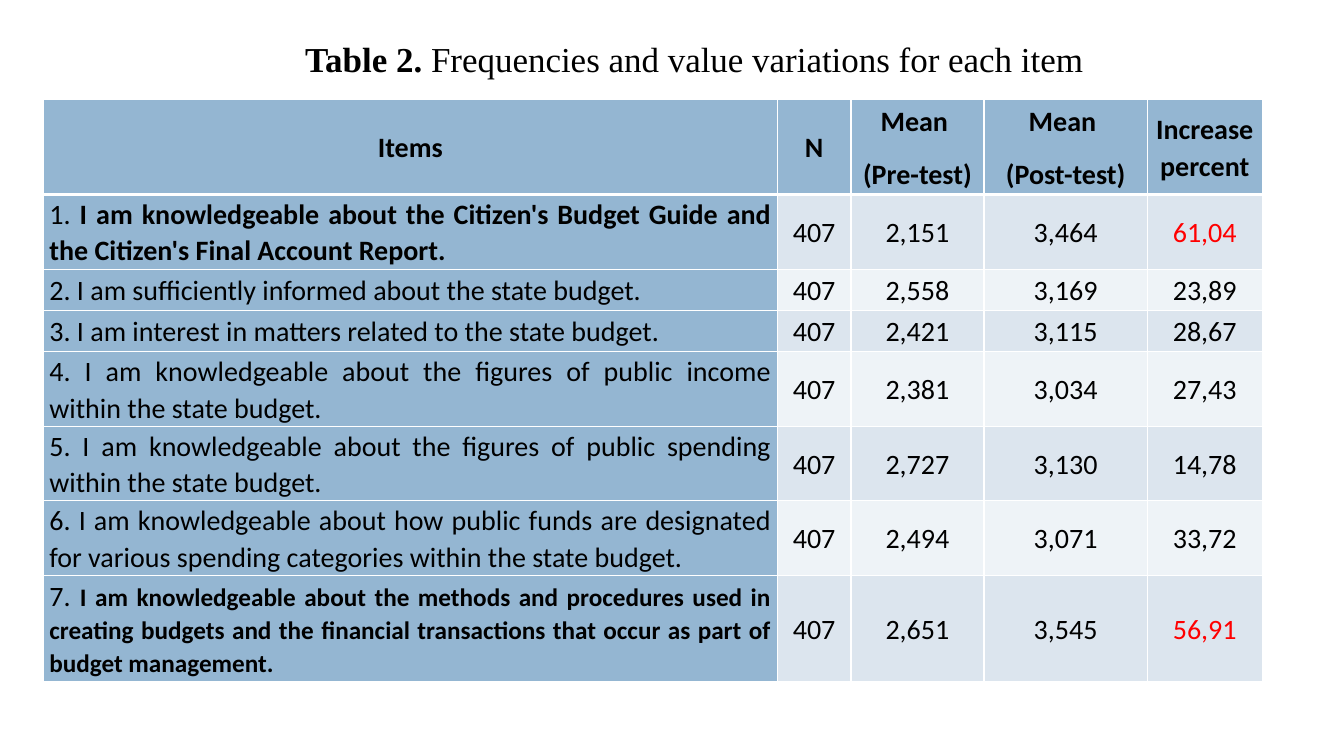
from lxml import etree
from pptx import Presentation
from pptx import util as u
from pptx.dml.color import RGBColor
from pptx.enum import text
from pptx.oxml import ns

COLORS = {
    "black": "000000",
    "red": "FF0000",
    "white": "FFFFFF",
    "blue": "94B6D2",
    "odd": "DCE5EE",
    "even": "EEF3F7",
}
COLUMN_WIDTHS = [7.28, 0.73, 1.32, 1.62, 1.14]
ROW_HEIGHTS = [0.94, 0.74, 0.41, 0.41, 0.74, 0.74, 0.74, 1.05]
HEADERS = [["Items"], ["N"], ["Mean ", "(Pre-test)"], ["Mean ", "(Post-test)"], ["Increase percent"]]
ITEMS = [
    ("I am knowledgeable about the Citizen's Budget Guide and the Citizen's Final Account Report.",
     "407", "2,151", "3,464", "61,04"),
    ("I am sufficiently informed about the state budget.", "407", "2,558", "3,169", "23,89"),
    ("I am interest in matters related to the state budget.", "407", "2,421", "3,115", "28,67"),
    ("I am knowledgeable about the figures of public income within the state budget.",
     "407", "2,381", "3,034", "27,43"),
    ("I am knowledgeable about the figures of public spending within the state budget.",
     "407", "2,727", "3,130", "14,78"),
    ("I am knowledgeable about how public funds are designated for various spending categories "
     "within the state budget.", "407", "2,494", "3,071", "33,72"),
    ("I am knowledgeable about the methods and procedures used in creating budgets and the "
     "financial transactions that occur as part of budget management.",
     "407", "2,651", "3,545", "56,91"),
]
HIGHLIGHT_SIZES = {1: 20, 7: 18}


def add_run(paragraph, words, size=20, bold=False, color="black", font="Calibri"):
    run = paragraph.add_run()
    run.text = words
    run.font.name = font
    run.font.size = u.Pt(size)
    run.font.bold = bold
    run.font.color.rgb = RGBColor.from_string(COLORS[color])


def set_borders(cell, bottom_width):
    properties = cell._tc.get_or_add_tcPr()
    widths = {"lnL": 1, "lnR": 1, "lnT": 1, "lnB": bottom_width}
    for position, (side, width) in enumerate(widths.items()):
        line = etree.Element(ns.qn(f"a:{side}"), w=str(u.Pt(width)))
        fill = etree.SubElement(line, ns.qn("a:solidFill"))
        etree.SubElement(fill, ns.qn("a:srgbClr"), val=COLORS["white"])
        properties.insert(position, line)


def format_cell(cell, fill, bottom_width=1):
    cell.fill.solid()
    cell.fill.fore_color.rgb = RGBColor.from_string(COLORS[fill])
    cell.vertical_anchor = text.MSO_ANCHOR.MIDDLE
    cell.margin_left = cell.margin_right = u.Inches(0.06)
    cell.margin_top = cell.margin_bottom = 0
    set_borders(cell, bottom_width)


def format_paragraph(paragraph, alignment=text.PP_ALIGN.CENTER):
    paragraph.alignment = alignment
    paragraph.line_spacing = 1.07
    paragraph.space_before = paragraph.space_after = u.Pt(6)
    return paragraph


def fill_header(cell, lines):
    format_cell(cell, "blue", bottom_width=3)
    frame = cell.text_frame
    for index, words in enumerate(lines):
        paragraph = frame.add_paragraph() if index else frame.paragraphs[0]
        add_run(format_paragraph(paragraph), words, bold=True)


def fill_item(cell, number, statement):
    format_cell(cell, "blue")
    paragraph = format_paragraph(cell.text_frame.paragraphs[0], text.PP_ALIGN.JUSTIFY)
    if number in HIGHLIGHT_SIZES:
        add_run(paragraph, f"{number}. ")
        add_run(paragraph, statement, size=HIGHLIGHT_SIZES[number], bold=True)
    else:
        add_run(paragraph, f"{number}. {statement}")


def fill_value(cell, value, band, color):
    format_cell(cell, band)
    add_run(format_paragraph(cell.text_frame.paragraphs[0]), value, color=color)


def add_caption(slide):
    caption = slide.shapes.title
    caption.left, caption.top = u.Inches(1.5), u.Inches(0.32)
    caption.width, caption.height = u.Inches(10.77), u.Inches(0.52)
    frame = caption.text_frame
    frame.word_wrap = True
    frame.auto_size = text.MSO_AUTO_SIZE.NONE
    frame.vertical_anchor = text.MSO_ANCHOR.MIDDLE
    paragraph = frame.paragraphs[0]
    paragraph.alignment = text.PP_ALIGN.CENTER
    add_run(paragraph, "Table 2. ", 25, True, font="Times New Roman")
    add_run(paragraph, "Frequencies and value variations for each item", 25, font="Times New Roman")


def add_frequencies(slide):
    frequencies = slide.shapes.add_table(
        len(ROW_HEIGHTS), len(COLUMN_WIDTHS), u.Inches(0.43), u.Inches(0.99),
        u.Inches(sum(COLUMN_WIDTHS)), u.Inches(sum(ROW_HEIGHTS))).table
    for column, width in zip(frequencies.columns, COLUMN_WIDTHS):
        column.width = u.Inches(width)
    for row, height in zip(frequencies.rows, ROW_HEIGHTS):
        row.height = u.Inches(height)
    for column, lines in enumerate(HEADERS):
        fill_header(frequencies.cell(0, column), lines)
    for number, (statement, *values) in enumerate(ITEMS, start=1):
        fill_item(frequencies.cell(number, 0), number, statement)
        band = "odd" if number % 2 else "even"
        for column, value in enumerate(values, start=1):
            highlighted = number in HIGHLIGHT_SIZES and column == len(values)
            fill_value(frequencies.cell(number, column), value, band,
                       "red" if highlighted else "black")


def main():
    deck = Presentation()
    deck.slide_width, deck.slide_height = u.Inches(13.33), u.Inches(7.5)
    slide = deck.slides.add_slide(deck.slide_layouts[5])
    add_caption(slide)
    add_frequencies(slide)
    deck.save("out.pptx")


if __name__ == "__main__":
    main()
